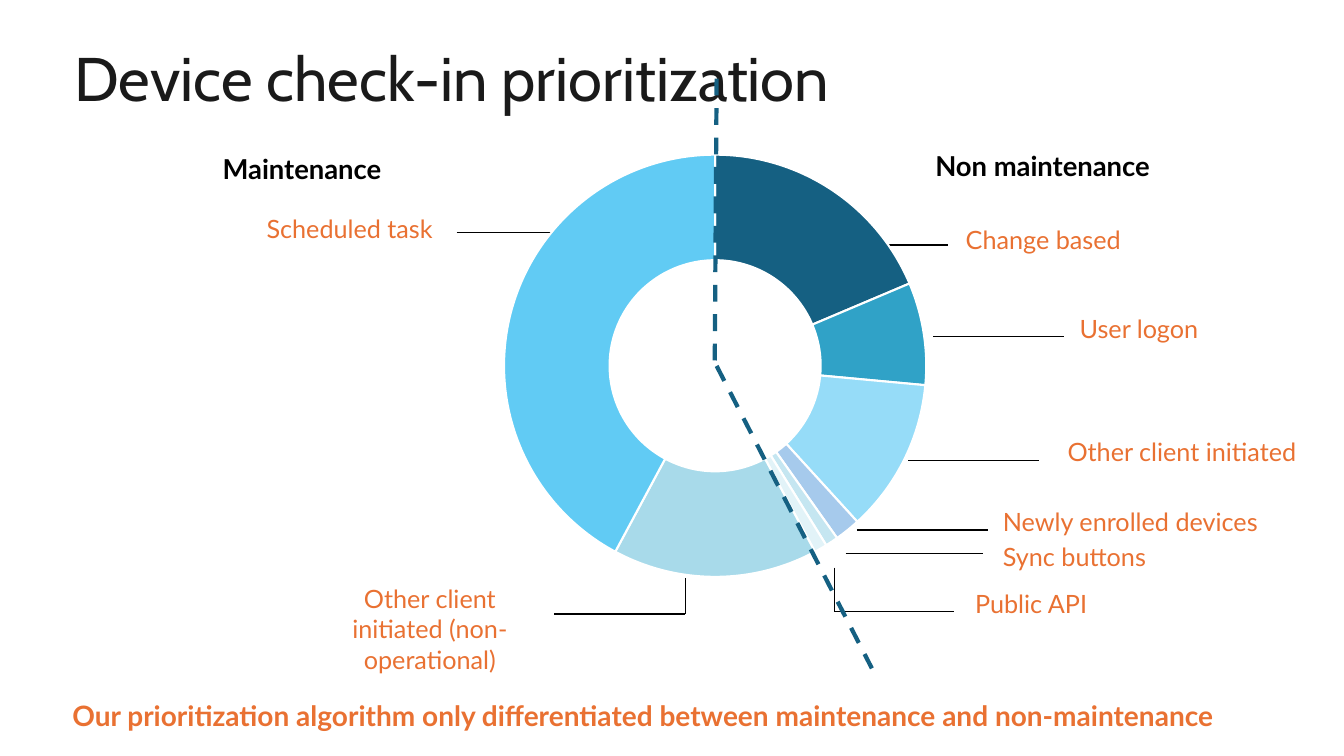
from lxml import etree
from pptx import Presentation
from pptx import util as u
from pptx.chart import data as chart_data
from pptx.dml.color import RGBColor
from pptx.enum import chart as charts, dml, shapes, text
from pptx.oxml import ns

BLACK = RGBColor(0, 0, 0)
INK = RGBColor(0x1A, 0x1A, 0x1A)
WHITE = RGBColor(0xFF, 0xFF, 0xFF)
ORANGE = RGBColor(0xE9, 0x71, 0x32)
NAVY = RGBColor(0x15, 0x60, 0x82)
SKY = RGBColor(0x61, 0xCB, 0xF4)
TEAL = RGBColor(0x30, 0xA2, 0xC7)
LIGHT_SKY = RGBColor(0x96, 0xDC, 0xF8)
PERIWINKLE = RGBColor(0xA6, 0xCA, 0xEC)
ICE = RGBColor(0xC5, 0xE6, 0xF1)
PALE_ICE = RGBColor(0xE2, 0xF3, 0xF8)
BROWN = RGBColor(0x99, 0x40, 0x10)
PALE_TEAL = RGBColor(0xA8, 0xDA, 0xEA)

# Share of check-ins and slice colour, clockwise from the top
SLICES = [(19, NAVY), (0, SKY), (8, TEAL), (12, LIGHT_SKY), (2, PERIWINKLE),
          (1, ICE), (1, PALE_ICE), (None, BROWN), (16, PALE_TEAL), (43, SKY)]

# Label, its left, top and width, then the corners of its leader line
CALLOUTS_BEHIND = [
    ("Change based", 676.8, 157, 136.8, [(583.2, 175), (676.8, 175)]),
    ("Scheduled task", 181.4, 149, 136.8, [(326.2, 166.3), (419.8, 166.3)]),
    ("User logon", 745.2, 220.3, 136.8, [(666.7, 240.5), (760.3, 240.5)]),
    ("Sync buttons", 699.1, 383, 136.8, [(604.1, 395.3), (702, 395.3)]),
    ("Public API", 677.5, 416.9, 118, [(596, 405.4), (596, 437), (681.8, 437)]),
]
CALLOUTS_IN_FRONT = [
    ("Other client initiated", 743.8, 308.2, 200.9, [(648.7, 329), (742.3, 329)]),
    ("Other client initiated (non-operational)", 220.3, 413.3, 173.5,
     [(396, 438.5), (489.6, 438.5), (489.6, 412.6)]),
    ("Newly enrolled devices", 707, 357.8, 200.9, [(612, 378.7), (705.6, 378.7)]),
]


class SlideBuilder:
    heading_font = "Cabin"
    body_font = "Lato"

    def __init__(self, presentation):
        self.slide = presentation.slides.add_slide(presentation.slide_layouts[5])

    def style(self, paragraph, font_name, size, color, bold=False):
        for run in paragraph.runs:
            run.font.name = font_name
            run.font.size = u.Pt(size)
            run.font.color.rgb = color
            run.font.bold = bold

    def title(self, wording, left, top, width, height):
        shape = self.slide.shapes.title
        shape.left, shape.top = u.Pt(left), u.Pt(top)
        shape.width, shape.height = u.Pt(width), u.Pt(height)
        frame = shape.text_frame
        frame.text = wording
        frame.vertical_anchor = text.MSO_ANCHOR.MIDDLE
        paragraph = frame.paragraphs[0]
        paragraph.alignment = text.PP_ALIGN.LEFT
        paragraph.line_spacing = 0.9
        self.style(paragraph, self.heading_font, 44, INK)

    def label(self, wording, left, top, width, height=28.8, size=18, color=ORANGE,
              bold=False, align=text.PP_ALIGN.CENTER, spacing=1.0):
        shape = self.slide.shapes.add_textbox(
            u.Pt(left), u.Pt(top), u.Pt(width), u.Pt(height))
        frame = shape.text_frame
        frame.word_wrap = True
        frame.text = wording
        paragraph = frame.paragraphs[0]
        paragraph.alignment = align
        paragraph.line_spacing = spacing
        self.style(paragraph, self.body_font, size, color, bold)

    def line(self, start, end, color=BLACK, weight=1, dash=None):
        connector = self.slide.shapes.add_connector(
            shapes.MSO_CONNECTOR.STRAIGHT, *(u.Pt(value) for value in start + end))
        connector.line.color.rgb = color
        connector.line.width = u.Pt(weight)
        if dash:
            connector.line.dash_style = dash
        etree.SubElement(connector._element.spPr, ns.qn("a:effectLst"))

    def callout(self, wording, left, top, width, corners):
        self.label(wording, left, top, width)
        for start, end in zip(corners, corners[1:]):
            self.line(start, end)

    def doughnut(self, slices, left, top, width, height):
        data = chart_data.CategoryChartData()
        data.categories = [str(number) for number in range(1, len(slices) + 1)]
        data.add_series("Series 1", [value for value, _ in slices])
        chart = self.slide.shapes.add_chart(
            charts.XL_CHART_TYPE.DOUGHNUT, u.Pt(left), u.Pt(top),
            u.Pt(width), u.Pt(height), data).chart
        chart.has_title = False
        chart.has_legend = False
        chart.font.name = self.body_font
        chart.font.size = u.Pt(10)
        chart.font.color.rgb = BLACK
        plot = chart.plots[0]
        plot.vary_by_categories = True
        plot.has_data_labels = False
        for index, (_, color) in enumerate(slices):
            point_format = plot.series[0].points[index].format
            point_format.fill.solid()
            point_format.fill.fore_color.rgb = color
            point_format.line.color.rgb = WHITE
            point_format.line.width = u.Pt(1.5)
        plot._element.find(ns.qn("c:holeSize")).set("val", "70")

        # Centre the ring in its frame
        area = chart._chartSpace.chart.plotArea
        for old_layout in area.findall(ns.qn("c:layout")):
            area.remove(old_layout)
        layout = etree.Element(ns.qn("c:layout"))
        area.insert(0, layout)
        manual = etree.SubElement(layout, ns.qn("c:manualLayout"))
        ring = 0.935 * height
        settings = {"layoutTarget": "inner", "xMode": "edge", "yMode": "edge",
                    "x": (1 - ring / width) / 2, "y": (1 - ring / height) / 2,
                    "w": ring / width, "h": ring / height}
        for name, value in settings.items():
            etree.SubElement(manual, ns.qn("c:" + name)).set("val", str(value))


def main():
    presentation = Presentation()
    presentation.slide_width = u.Pt(960)
    presentation.slide_height = u.Pt(540)
    builder = SlideBuilder(presentation)
    builder.title("Device check-in prioritization", 46, 36, 867.6, 44)

    # Ring chart between its callouts
    for callout in CALLOUTS_BEHIND:
        builder.callout(*callout)
    builder.doughnut(SLICES, 273.6, 100, 474.5, 322.6)
    for callout in CALLOUTS_IN_FRONT:
        builder.callout(*callout)

    # Divider between maintenance and non maintenance
    for start, end in [((511.9, 56.2), (510.5, 265.7)), ((511.9, 261.4), (622.8, 477.4))]:
        builder.line(start, end, NAVY, 3, dml.MSO_LINE.DASH)

    # Takeaway and side headings
    builder.label(
        "Our prioritization algorithm only differentiated between maintenance and non-maintenance",
        0, 495.4, 918.7, 31.7, size=20, bold=True)
    for heading, left, top in [("Maintenance", 152, 111.6), ("Non maintenance", 661, 109.4)]:
        builder.label(heading, left, top, 257, 26.6, 19.6, BLACK, True,
                      text.PP_ALIGN.LEFT, 0.7)

    presentation.save("out.pptx")


if __name__ == "__main__":
    main()
